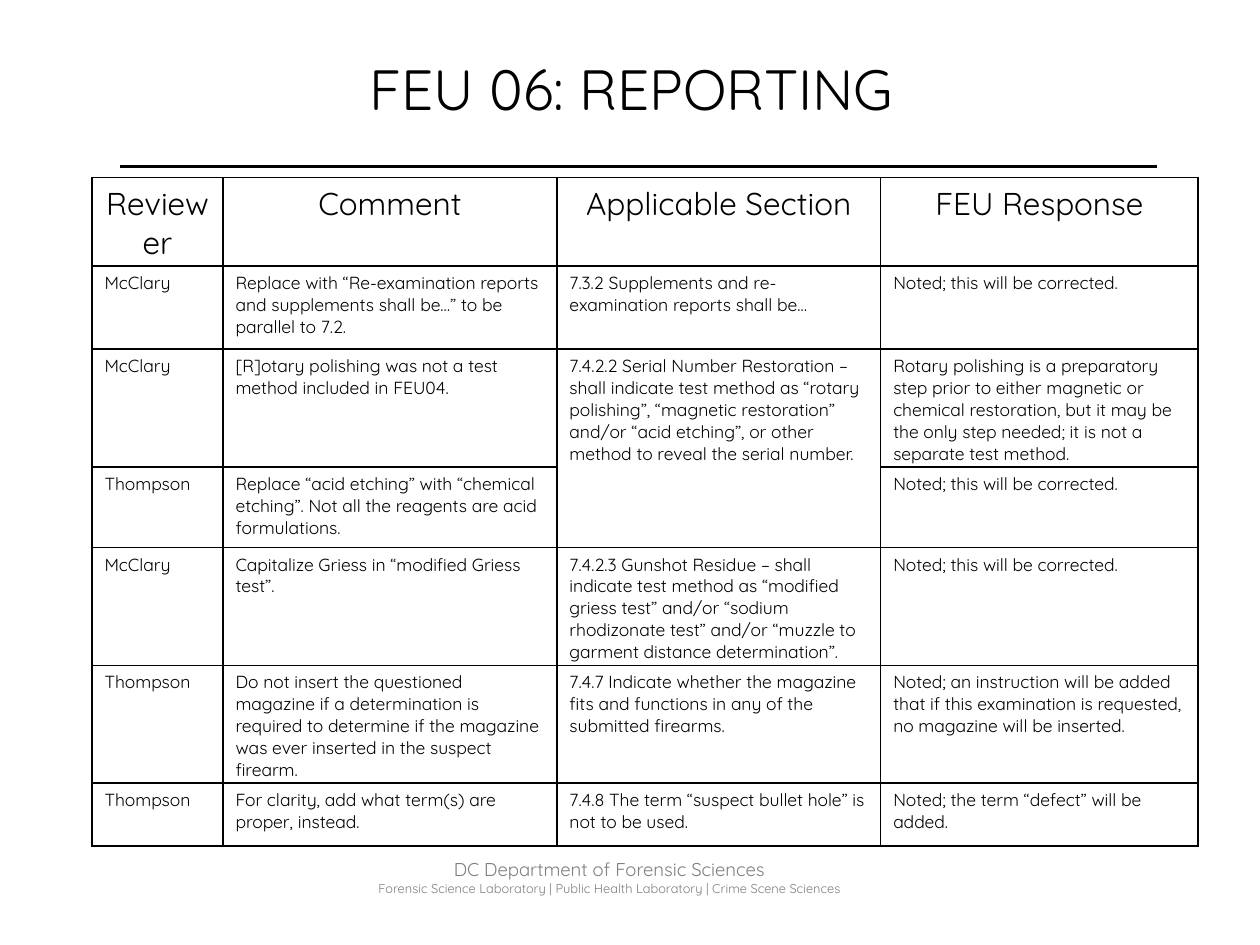
from typing import NamedTuple

from lxml import etree
from pptx import Presentation
from pptx.dml.color import RGBColor
from pptx.enum.shapes import MSO_CONNECTOR
from pptx.enum.text import MSO_ANCHOR, PP_ALIGN
from pptx.oxml.ns import qn
from pptx.util import Inches, Pt

FONT = "Quicksand"
BLACK = RGBColor(0x00, 0x00, 0x00)
GRAY = RGBColor(0x7F, 0x7F, 0x7F)
LEFT, CENTER = PP_ALIGN.LEFT, PP_ALIGN.CENTER
TOP, MIDDLE = MSO_ANCHOR.TOP, MSO_ANCHOR.MIDDLE
STRAIGHT = MSO_CONNECTOR.STRAIGHT
BORDER_SIDES = ("a:lnL", "a:lnR", "a:lnT", "a:lnB")


class Line(NamedTuple):
    text: str
    size: float


class Review(NamedTuple):
    reviewer: str
    comment: str
    section: str
    response: str
    height: float


CORRECTED = "Noted; this will be corrected."
HEADINGS = Review("Reviewer", "Comment", "Applicable Section", "FEU Response", 0.33)
REVIEWS = [
    Review("McClary",
           "Replace with “Re-examination reports and supplements shall be…” "
           "to be parallel to 7.2.",
           "7.3.2 Supplements and re-examination reports shall be…",
           CORRECTED, 0.66),
    Review("McClary",
           "[R]otary polishing was not a test method included in FEU04.",
           "7.4.2.2 Serial Number Restoration – shall indicate test method as "
           "“rotary polishing”, “magnetic restoration” and/or “acid etching”, "
           "or other method to reveal the serial number.",
           "Rotary polishing is a preparatory step prior to either magnetic or "
           "chemical restoration, but it may be the only step needed; it is not "
           "a separate test method.", 0.64),
    # An empty section continues the one above
    Review("Thompson",
           "Replace “acid etching” with “chemical etching”. Not all the reagents "
           "are acid formulations.",
           "", CORRECTED, 0.64),
    Review("McClary",
           "Capitalize Griess in “modified Griess test”.",
           "7.4.2.3 Gunshot Residue – shall indicate test method as “modified "
           "griess test” and/or “sodium rhodizonate test” and/or “muzzle to "
           "garment distance determination”.",
           CORRECTED, 0.68),
    Review("Thompson",
           "Do not insert the questioned magazine if a determination is required "
           "to determine if the magazine was ever inserted in the suspect firearm.",
           "7.4.7 Indicate whether the magazine fits and functions in any of the "
           "submitted firearms.",
           "Noted; an instruction will be added that if this examination is "
           "requested, no magazine will be inserted.", 0.68),
    Review("Thompson",
           "For clarity, add what term(s) are proper, instead.",
           "7.4.8 The term “suspect bullet hole” is not to be used.",
           "Noted; the term “defect” will be added.", 0.5),
]
COLUMN_WIDTHS = (1.04, 2.65, 2.57, 2.52)
SECTION_COLUMN = 2


def write_text(paragraph, text: str, *, size: float, color=BLACK, align=LEFT) -> None:
    paragraph.alignment = align
    run = paragraph.add_run()
    run.text = text
    run.font.name = FONT
    run.font.size = Pt(size)
    run.font.color.rgb = color


def add_lines(slide, box: tuple, lines: list[Line], *, color=BLACK,
              anchor=TOP, margins=(0.1, 0.05)) -> None:
    frame = slide.shapes.add_textbox(*map(Inches, box)).text_frame
    frame.word_wrap = True
    frame.vertical_anchor = anchor
    frame.margin_left = frame.margin_right = Inches(margins[0])
    frame.margin_top = frame.margin_bottom = Inches(margins[1])
    for index, line in enumerate(lines):
        paragraph = frame.add_paragraph() if index else frame.paragraphs[0]
        write_text(paragraph, line.text, size=line.size, color=color, align=CENTER)


def add_rule(slide, start: tuple, end: tuple, width: float) -> None:
    rule = slide.shapes.add_connector(STRAIGHT, *map(Inches, start + end))
    rule.line.color.rgb = BLACK
    rule.line.width = Pt(width)
    etree.SubElement(rule._element.spPr, qn("a:effectLst"))


def outline_cell(cell, width: float) -> None:
    properties = cell._tc.get_or_add_tcPr()
    for side in BORDER_SIDES:
        border = etree.SubElement(properties, qn(side), w=str(Pt(width)))
        fill = etree.SubElement(border, qn("a:solidFill"))
        etree.SubElement(fill, qn("a:srgbClr"), val=str(BLACK))
    cell.fill.background()


def add_review_table(slide, box: tuple) -> None:
    rows = [HEADINGS, *REVIEWS]
    table = slide.shapes.add_table(
        len(rows), len(COLUMN_WIDTHS), *map(Inches, box)).table
    table.first_row = table.horz_banding = False
    for column, width in zip(table.columns, COLUMN_WIDTHS):
        column.width = Inches(width)
    for row_index, review in enumerate(rows):
        table.rows[row_index].height = Inches(review.height)
        is_heading = review is HEADINGS
        for column_index, text in enumerate(review[:len(COLUMN_WIDTHS)]):
            cell = table.cell(row_index, column_index)
            outline_cell(cell, 1)
            if text:
                write_text(cell.text_frame.paragraphs[0], text,
                           size=18 if is_heading else 10,
                           align=CENTER if is_heading else LEFT)
        if not review.section:
            above = table.cell(row_index - 1, SECTION_COLUMN)
            above.merge(table.cell(row_index, SECTION_COLUMN))


def main() -> None:
    deck = Presentation()
    deck.slide_width, deck.slide_height = Inches(10), Inches(7.5)
    slide = deck.slides.add_slide(deck.slide_layouts[6])

    # Footer
    add_lines(slide, (2, 6.77, 5.67, 0.38), [
        Line("DC Department of Forensic Sciences", 10.6),
        Line("Forensic Science Laboratory | Public Health Laboratory | "
             "Crime Scene Sciences", 7.3),
    ], color=GRAY, margins=(0.07, 0.04))

    # Title and rule
    add_rule(slide, (0.95, 1.32), (9.18, 1.32), 2)
    add_lines(slide, (0.51, 0.07, 9, 1.25), [Line("FEU 06: REPORTING", 32.4)],
              anchor=MIDDLE, margins=(0.11, 0.06))

    # Review comments
    add_review_table(slide, (0.73, 1.41, 8.77, 5.1))

    deck.save("out.pptx")


if __name__ == "__main__":
    main()
